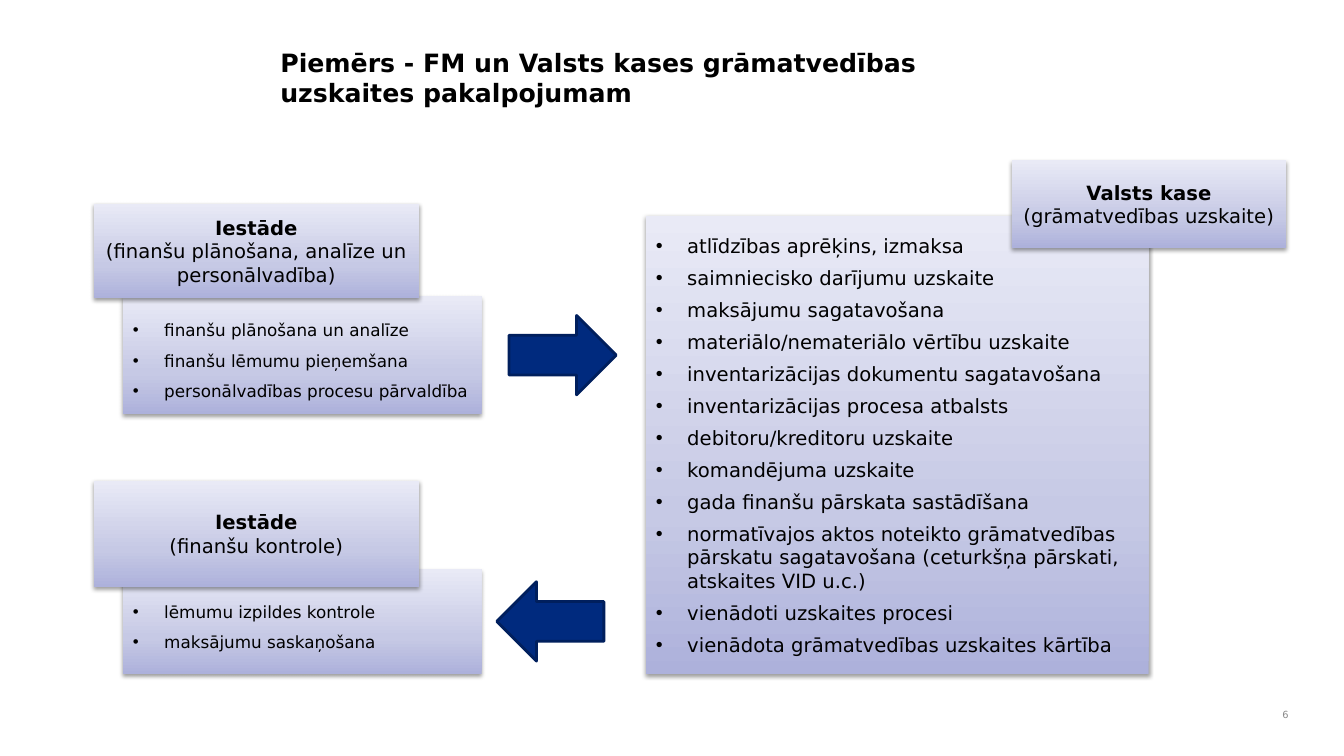
from lxml import etree
from pptx import Presentation
from pptx import util as u
from pptx.dml.color import RGBColor
from pptx.enum import shapes, text
from pptx.oxml import ns

FACE = "DejaVu Sans"
STOPS = {0: "ADB1DB", 35: "C6C9E5", 100: "E9EAF6"}
DUTIES = [
    "atlīdzības aprēķins, izmaksa",
    "saimniecisko darījumu uzskaite",
    "maksājumu sagatavošana",
    "materiālo/nemateriālo vērtību uzskaite",
    "inventarizācijas dokumentu sagatavošana",
    "inventarizācijas procesa atbalsts",
    "debitoru/kreditoru uzskaite",
    "komandējuma uzskaite",
    "gada finanšu pārskata sastādīšana",
    "normatīvajos aktos noteikto grāmatvedības pārskatu sagatavošana "
    "(ceturkšņa pārskati, atskaites VID u.c.)",
    "vienādoti uzskaites procesi",
    "vienādota grāmatvedības uzskaites kārtība",
]
PLANS = [
    "finanšu plānošana un analīze",
    "finanšu lēmumu pieņemšana",
    "personālvadības procesu pārvaldība",
]
CHECKS = ["lēmumu izpildes kontrole", "maksājumu saskaņošana"]


def color(code):
    """Turn a hex string into a colour."""
    return RGBColor.from_string(code)


def apply(item, values):
    """Set every attribute named in a dict of values."""
    for name, value in values.items():
        setattr(item, name, value)


def place(shape, box):
    """Move a shape to a box given in centimetres."""
    apply(shape, dict(zip(("left", "top", "width", "height"), map(u.Cm, box))))


def node(parent, tag, **attrs):
    """Add a DrawingML element to a parent."""
    return etree.SubElement(parent, ns.qn("a:" + tag), {k: str(v) for k, v in attrs.items()})


def write(frame, lines, size, form=None, bold=(), ink="000000", dot=False):
    """Fill a text frame with one paragraph per line."""
    frame.word_wrap = True
    for i, line in enumerate(lines):
        para = frame.paragraphs[0] if i == 0 else frame.add_paragraph()
        apply(para, form or {})
        if dot:
            props = para._p.get_or_add_pPr()
            props.set("marL", str(u.Cm(0.79)))
            props.set("indent", str(u.Cm(-0.79)))
            node(props, "buFont", typeface="Arial")
            node(props, "buChar", char="•")
        run = para.add_run()
        run.text = line
        apply(run.font, {"name": FACE, "size": u.Pt(size), "bold": i in bold})
        run.font.color.rgb = color(ink)


def panel(slide, box):
    """Draw a shaded rectangle with a soft shadow and return its text frame."""
    shape = slide.shapes.add_shape(shapes.MSO_SHAPE.RECTANGLE, 0, 0, 0, 0)
    place(shape, box)
    props = shape._element.spPr
    grad = node(props, "gradFill", rotWithShape=1)
    stops = node(grad, "gsLst")
    for pos, code in STOPS.items():
        node(node(stops, "gs", pos=pos * 1000), "srgbClr", val=code)
    node(grad, "lin", ang=270 * 60000, scaled=0)
    node(node(props, "ln"), "noFill")
    shade = node(node(props, "effectLst"), "outerShdw", blurRad=u.Pt(3.1),
                 dist=u.Pt(1.6), dir=90 * 60000, rotWithShape=0)
    node(node(shade, "srgbClr", val="000000"), "alpha", val=38000)
    shape.text_frame.vertical_anchor = text.MSO_ANCHOR.MIDDLE
    return shape.text_frame


def label(slide, box, lines):
    """Draw a centred heading panel whose first line is bold."""
    write(panel(slide, box), lines, 14, {"alignment": text.PP_ALIGN.CENTER}, bold=(0,))


def office(slide, box, lines, items, head, drop):
    """Draw an institution: a task list with its heading over the top left."""
    x, y, w, h = box
    form = {"alignment": text.PP_ALIGN.JUSTIFY, "line_spacing": 1.5}
    write(panel(slide, (x + 0.74, y + drop, w - 0.74, h - drop)), items, 12, form, dot=True)
    label(slide, (x, y, 8.2, head), lines)


def treasury(slide, box):
    """Draw the treasury: its duties with a heading over the top right."""
    x, y, w, h = box
    form = {"alignment": text.PP_ALIGN.LEFT, "space_after": u.Pt(6)}
    write(panel(slide, (x, y + 1.4, 12.67, h - 1.4)), DUTIES, 14, form, dot=True)
    label(slide, (x + w - 6.91, y, 6.91, 2.21), ["Valsts kase", "(grāmatvedības uzskaite)"])


def arrow(slide, kind, box):
    """Draw a solid block arrow."""
    shape = slide.shapes.add_shape(kind, 0, 0, 0, 0)
    place(shape, box)
    shape.shadow.inherit = False
    shape.fill.solid()
    shape.fill.fore_color.rgb = color("002A7E")
    shape.line.color.rgb = color("001F5D")
    shape.line.width = u.Pt(2)


def title(slide, box):
    """Place and write the slide title."""
    shape = slide.shapes.title
    place(shape, box)
    frame = shape.text_frame
    apply(frame, {"vertical_anchor": text.MSO_ANCHOR.TOP, "auto_size": text.MSO_AUTO_SIZE.NONE})
    write(frame, ["Piemērs - FM un Valsts kases grāmatvedības uzskaites pakalpojumam"],
          18, {"alignment": text.PP_ALIGN.LEFT}, bold=(0,))


def number(slide, box):
    """Write the slide number."""
    frame = slide.shapes.add_textbox(*map(u.Cm, box)).text_frame
    frame.vertical_anchor = text.MSO_ANCHOR.MIDDLE
    write(frame, ["6"], 7, {"alignment": text.PP_ALIGN.RIGHT}, ink="898989")


def main():
    """Build the slide and save it."""
    deck = Presentation()
    apply(deck, {"slide_width": u.Cm(33.87), "slide_height": u.Cm(19.05)})
    slide = deck.slides.add_slide(deck.slide_layouts[5])
    title(slide, (6.81, 1.07, 19.99, 2.87))
    number(slide, (31.6, 17.58, 1.12, 0.84))
    treasury(slide, (16.28, 4.04, 16.13, 12.95))
    office(slide, (2.36, 5.13, 9.78, 5.31),
           ["Iestāde", "(finanšu plānošana, analīze un personālvadība)"], PLANS, 2.39, 2.34)
    office(slide, (2.36, 12.12, 9.78, 4.87),
           ["Iestāde", "(finanšu kontrole)"], CHECKS, 2.67, 2.23)
    arrow(slide, shapes.MSO_SHAPE.RIGHT_ARROW, (12.83, 7.95, 2.7, 2))
    arrow(slide, shapes.MSO_SHAPE.LEFT_ARROW, (12.52, 14.66, 2.7, 2))
    deck.save("out.pptx")


if __name__ == "__main__":
    main()
